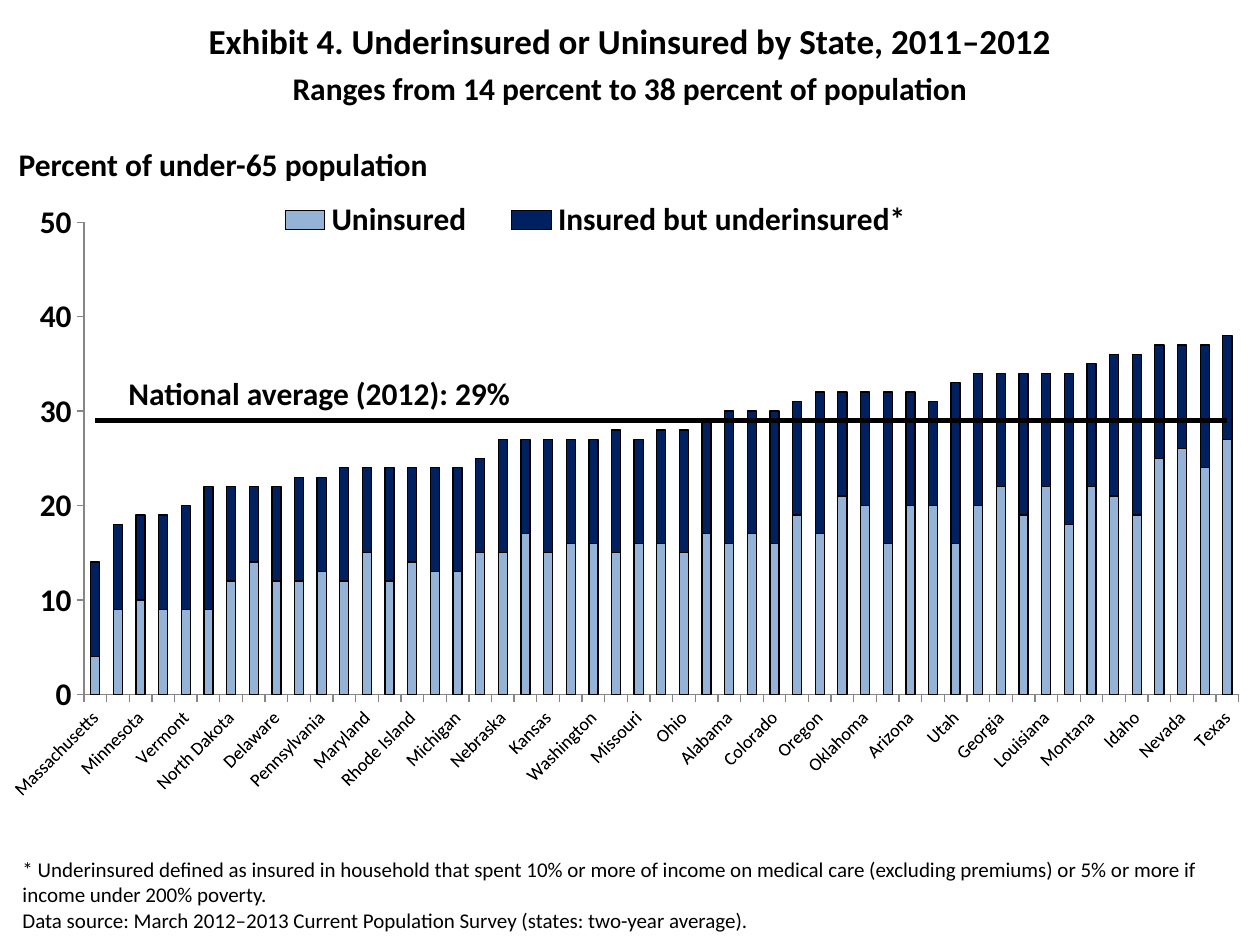
from pptx import Presentation
from pptx.chart.data import CategoryChartData
from pptx.dml.color import RGBColor
from pptx.enum.chart import XL_CHART_TYPE, XL_LEGEND_POSITION, XL_MARKER_STYLE, XL_TICK_MARK
from pptx.enum.text import MSO_ANCHOR, MSO_AUTO_SIZE, PP_ALIGN
from pptx.oxml import parse_xml
from pptx.oxml.ns import nsdecls, qn
from pptx.util import Inches, Pt

FONT = "Calibri"
BLACK = "000000"
STATES = [
    "Massachusetts", "Dist. of Columbia", "Minnesota", "Connecticut", "Vermont", "Hawaii",
    "North Dakota", "New Hampshire", "Delaware", "Iowa", "Pennsylvania", "Wisconsin",
    "Maryland", "Maine", "Rhode Island", "New York", "Michigan", "Virginia", "Nebraska",
    "New Jersey", "Kansas", "South Dakota", "Washington", "Indiana", "Missouri", "Illinois",
    "Ohio", "Kentucky", "Alabama", "West Virginia", "Colorado", "South Carolina", "Oregon",
    "California", "Oklahoma", "Tennessee", "Arizona", "Alaska", "Utah", "North Carolina",
    "Georgia", "Wyoming", "Louisiana", "Mississippi", "Montana", "Arkansas", "Idaho",
    "Florida", "Nevada", "New Mexico", "Texas",
]
UNINSURED = [
    4, 9, 10, 9, 9, 9, 12, 14, 12, 12, 13, 12, 15, 12, 14, 13, 13, 15, 15, 17, 15, 16, 16, 15, 16, 16,
    15, 17, 16, 17, 16, 19, 17, 21, 20, 16, 20, 20, 16, 20, 22, 19, 22, 18, 22, 21, 19, 25, 26, 24, 27,
]
UNDERINSURED = [
    10, 9, 9, 10, 11, 13, 10, 8, 10, 11, 10, 12, 9, 12, 10, 11, 11, 10, 12, 10, 12, 11, 11, 13, 11, 12,
    13, 12, 14, 13, 14, 12, 15, 11, 12, 16, 12, 11, 17, 14, 12, 15, 12, 16, 13, 15, 17, 12, 11, 13, 11,
]
NATIONAL_AVERAGE = 29


def rgb(color):
    """Return the colour of a hex string."""
    return RGBColor.from_string(color)


def set_font(font, size, bold=False):
    """Apply the slide's font in black."""
    font.name, font.size, font.bold = FONT, Pt(size), bold
    font.color.rgb = rgb(BLACK)


def add_run(p, text, size, bold=False):
    """Add one formatted run to a paragraph."""
    r = p.add_run()
    r.text = text
    set_font(r.font, size, bold)


def set_title(s, heading, subheading):
    """Place and fill the title placeholder."""
    sp = s.shapes.title
    sp.left, sp.top, sp.width, sp.height = Inches(0), Inches(0.1), Inches(10), Inches(0.8)
    tf = sp.text_frame
    tf.auto_size = MSO_AUTO_SIZE.NONE
    tf.vertical_anchor = MSO_ANCHOR.MIDDLE
    p = tf.paragraphs[0]
    add_run(p, heading, 20, True)
    p.alignment = PP_ALIGN.CENTER
    p = tf.add_paragraph()
    add_run(p, subheading, 18, True)
    p.alignment = PP_ALIGN.CENTER
    p.space_before = Pt(4)


def add_text(s, left, top, width, height, lines, size, bold=False):
    """Add a text box with lines parted by line breaks."""
    sp = s.shapes.add_textbox(Inches(left), Inches(top), Inches(width), Inches(height))
    tf = sp.text_frame
    tf.word_wrap = True
    tf.auto_size = MSO_AUTO_SIZE.SHAPE_TO_FIT_TEXT
    p = tf.paragraphs[0]
    for i, line in enumerate(lines):
        if i:
            p.add_line_break()
        add_run(p, line, size, bold)


def make_layout(x, y, w, h, inner=False):
    """Return a manual layout in fractions of the chart."""
    target = '<c:layoutTarget val="inner"/>' if inner else ""
    return parse_xml(
        f'<c:layout {nsdecls("c")}><c:manualLayout>{target}'
        '<c:xMode val="edge"/><c:yMode val="edge"/>'
        f'<c:x val="{x}"/><c:y val="{y}"/><c:w val="{w}"/><c:h val="{h}"/>'
        "</c:manualLayout></c:layout>"
    )


def remove_children(parent, tag):
    """Remove every child with the given tag."""
    for child in parent.findall(qn(tag)):
        parent.remove(child)


def move_last_to_line(chart):
    """Turn the last column series into a line on the same axes."""
    bar = chart.plots[0]._element
    ser = bar.findall(qn("c:ser"))[-1]
    remove_children(ser, "c:invertIfNegative")
    line = parse_xml(
        f'<c:lineChart {nsdecls("c")}><c:grouping val="standard"/><c:varyColors val="0"/>'
        '<c:marker val="1"/></c:lineChart>'
    )
    line.insert(2, ser)
    for ax in bar.findall(qn("c:axId")):
        line.append(parse_xml(f'<c:axId {nsdecls("c")} val="{ax.get("val")}"/>'))
    bar.addnext(line)


def format_axes(chart):
    """Format the state axis and the percent axis."""
    for axis, size, bold in ((chart.category_axis, 10.5, False), (chart.value_axis, 18, True)):
        axis.has_major_gridlines = False
        axis.major_tick_mark = XL_TICK_MARK.OUTSIDE
        axis.format.line.color.rgb = rgb("868686")
        set_font(axis.tick_labels.font, size, bold)
    axis.minimum_scale, axis.maximum_scale, axis.major_unit = 0, 50, 10
    axis.tick_labels.number_format = "#,##0"
    axis.tick_labels.number_format_is_linked = False
    cat = chart.category_axis._element
    cat.find(qn("c:txPr")).find(qn("a:bodyPr")).set("rot", "-2700000")
    skip = parse_xml(f'<c:tickLblSkip {nsdecls("c")} val="2"/>')
    cat.find(qn("c:noMultiLvlLbl")).addprevious(skip)


def format_legend(chart):
    """Place the legend and leave the average line out of it."""
    chart.has_legend = True
    legend = chart.legend
    legend.position = XL_LEGEND_POSITION.TOP
    legend.include_in_layout = False
    set_font(legend.font, 18, True)
    el = legend._element
    remove_children(el, "c:layout")
    pos = el.find(qn("c:legendPos"))
    pos.addnext(make_layout(0.19, 0.11, 0.56, 0.07))
    pos.addnext(parse_xml(
        f'<c:legendEntry {nsdecls("c")}><c:idx val="2"/><c:delete val="1"/></c:legendEntry>'
    ))


def add_state_chart(s):
    """Add the stacked columns with the national average line."""
    data = CategoryChartData()
    data.categories = STATES
    data.add_series("Uninsured", UNINSURED)
    data.add_series("Insured but underinsured*", UNDERINSURED)
    data.add_series("Series 3", [NATIONAL_AVERAGE] * len(STATES))
    chart = s.shapes.add_chart(
        XL_CHART_TYPE.COLUMN_STACKED, Inches(0.08), Inches(0.83), Inches(9.83), Inches(6.31), data
    ).chart
    chart.has_title = False
    set_font(chart.font, 18)
    move_last_to_line(chart)
    columns, average = chart.plots
    columns.gap_width, columns.overlap = 150, 100
    columns.vary_by_categories = False
    for series, color in zip(columns.series, ("95B3D7", "002060")):
        series.format.fill.solid()
        series.format.fill.fore_color.rgb = rgb(color)
        series.format.line.color.rgb = rgb(BLACK)
        series.format.line.width = Pt(0.75)
    series = average.series[0]
    series.smooth = False
    series.marker.style = XL_MARKER_STYLE.NONE
    series.format.line.color.rgb = rgb(BLACK)
    series.format.line.width = Pt(3)
    format_axes(chart)
    format_legend(chart)
    area = columns._element.getparent()
    remove_children(area, "c:layout")
    area.insert(0, make_layout(0.055, 0.148, 0.937, 0.594, inner=True))


def main():
    """Build the slide and save it."""
    prs = Presentation()
    prs.slide_width, prs.slide_height = Inches(10), Inches(7.5)
    s = prs.slides.add_slide(prs.slide_layouts[5])
    set_title(s, "Exhibit 4. Underinsured or Uninsured by State, 2011–2012",
              "Ranges from 14 percent to 38 percent of population")
    add_state_chart(s)
    add_text(s, 0.92, 2.92, 5.38, 0.4, ["National average (2012): 29%"], 18, True)
    add_text(s, 0.08, 6.75, 9.75, 0.71, [
        "* Underinsured defined as insured in household that spent 10% or more of income on medical care "
        "(excluding premiums) or 5% or more if income under 200% poverty. ",
        "Data source: March 2012–2013 Current Population Survey (states: two-year average).",
    ], 12)
    add_text(s, 0.05, 1.1, 3.53, 0.4, ["Percent of under-65 population"], 18, True)
    prs.save("out.pptx")


if __name__ == "__main__":
    main()
